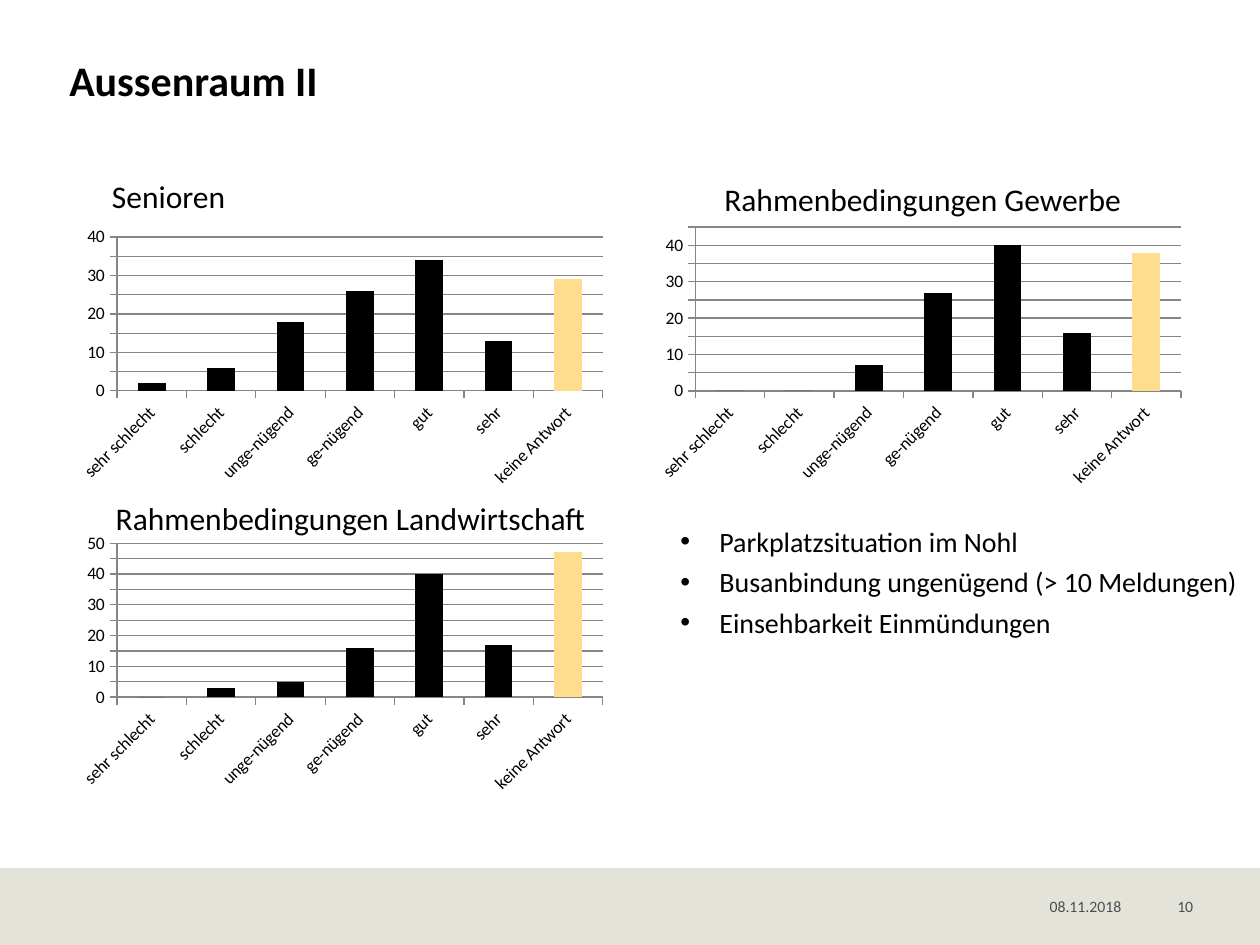
from dataclasses import dataclass

from lxml import etree
from pptx import Presentation
from pptx.chart.data import CategoryChartData
from pptx.dml.color import RGBColor
from pptx.enum import chart as charts, shapes, text
from pptx.oxml.ns import qn
from pptx.util import Pt

PX = 9144
FONT = "Calibri"
BLACK, GREY, SAND, YELLOW, AXIS = "000000", "4C4F52", "E4E3D9", "FFDD8F", "868686"
CATEGORIES = ["sehr schlecht", "schlecht", "unge-nügend", "ge-nügend", "gut", "sehr", "keine Antwort"]
CHART_WIDTH, CHART_HEIGHT = 432, 215


@dataclass
class Box:
    left: int
    top: int
    width: int
    height: int

    def emu(self) -> list[int]:
        return [side * PX for side in (self.left, self.top, self.width, self.height)]


@dataclass
class Survey:
    heading: str
    heading_box: Box
    left: int
    top: int
    values: tuple[int, ...]
    maximum: int


SURVEYS = [
    Survey("Senioren", Box(79, 136, 111, 40), 55, 176, (2, 6, 18, 26, 34, 13, 29), 40),
    Survey("Rahmenbedingungen Gewerbe", Box(565, 138, 339, 40), 514, 176, (0, 0, 7, 27, 40, 16, 38), 45),
    Survey("Rahmenbedingungen Landwirtschaft", Box(82, 391, 398, 40), 55, 419, (0, 3, 5, 16, 40, 17, 47), 50),
]
REMARKS = [
    "Parkplatzsituation im Nohl",
    "Busanbindung ungenügend (> 10 Meldungen)",
    "Einsehbarkeit Einmündungen",
]


def colour(value: str) -> RGBColor:
    return RGBColor.from_string(value)


def style(font, size: int, fill: str, bold: bool = False) -> None:
    font.name, font.size, font.bold = FONT, Pt(size), bold
    font.color.rgb = colour(fill)


def place(shape, box: Box) -> None:
    shape.left, shape.top, shape.width, shape.height = box.emu()


def clear_margins(frame) -> None:
    frame.margin_left = frame.margin_top = frame.margin_right = frame.margin_bottom = 0


def write(para, words: str, size: int, fill: str, bold: bool = False) -> None:
    span = para.add_run()
    span.text = words
    style(span.font, size, fill, bold)


def add_band(page) -> None:
    band = page.shapes.add_shape(shapes.MSO_SHAPE.RECTANGLE, *Box(0, 689, 1000, 61).emu())
    band.shadow.inherit = False
    band.fill.solid()
    band.fill.fore_color.rgb = colour(SAND)
    band.line.fill.background()


def add_footer(page, words: str, box: Box, align) -> None:
    frame = page.shapes.add_textbox(*box.emu()).text_frame
    clear_margins(frame)
    frame.word_wrap = True
    frame.vertical_anchor = text.MSO_ANCHOR.BOTTOM
    frame.paragraphs[0].alignment = align
    write(frame.paragraphs[0], words, 9, GREY)


def fill_title(title, words: str) -> None:
    place(title, Box(55, 43, 891, 40))
    frame = title.text_frame
    clear_margins(frame)
    frame.auto_size = text.MSO_AUTO_SIZE.NONE
    frame.vertical_anchor = text.MSO_ANCHOR.TOP
    frame.paragraphs[0].alignment = text.PP_ALIGN.LEFT
    write(frame.paragraphs[0], words, 24, BLACK, True)


def fill_remarks(body, remarks: list[str]) -> None:
    place(body, Box(530, 411, 891, 491))
    frame = body.text_frame
    frame.auto_size = text.MSO_AUTO_SIZE.NONE
    for index, remark in enumerate(remarks):
        para = frame.add_paragraph() if index else frame.paragraphs[0]
        para.space_before = Pt(4 if index else 0)
        properties = para._p.get_or_add_pPr()
        properties.set("marL", str(31 * PX))
        properties.set("indent", str(-31 * PX))
        etree.SubElement(properties, qn("a:buFont"), typeface="Arial")
        etree.SubElement(properties, qn("a:buChar"), char="•")
        write(para, remark, 16, BLACK)


def draw_line(line) -> None:
    line.color.rgb = colour(AXIS)
    line.width = Pt(0.75)


def add_survey(page, survey: Survey) -> None:
    frame = page.shapes.add_textbox(*survey.heading_box.emu()).text_frame
    frame.word_wrap = False
    frame.auto_size = text.MSO_AUTO_SIZE.SHAPE_TO_FIT_TEXT
    write(frame.paragraphs[0], survey.heading, 18, BLACK)

    data = CategoryChartData()
    data.categories = CATEGORIES
    data.add_series("Series 1", survey.values)
    box = Box(survey.left, survey.top, CHART_WIDTH, CHART_HEIGHT)
    chart = page.shapes.add_chart(charts.XL_CHART_TYPE.COLUMN_CLUSTERED, *box.emu(), data).chart
    chart.has_legend = chart.has_title = False
    style(chart.font, 10, BLACK)

    plot = chart.plots[0]
    plot.gap_width, plot.vary_by_categories = 150, False
    series = plot.series[0]
    for part, fill in ((series, BLACK), (series.points[len(CATEGORIES) - 1], YELLOW)):
        part.format.fill.solid()
        part.format.fill.fore_color.rgb = colour(fill)

    for axis in (chart.category_axis, chart.value_axis):
        axis.major_tick_mark = charts.XL_TICK_MARK.OUTSIDE
        draw_line(axis.format.line)
        style(axis.tick_labels.font, 10, BLACK)
    chart.category_axis._element.find(qn("c:txPr")).find(qn("a:bodyPr")).set("rot", "-2700000")
    values = chart.value_axis
    values.minimum_scale, values.maximum_scale, values.major_unit = 0, survey.maximum, 5
    values.has_major_gridlines = True
    draw_line(values.major_gridlines.format.line)


def main() -> None:
    """Build the survey slide and save it."""
    deck = Presentation()
    deck.slide_width, deck.slide_height = 1000 * PX, 750 * PX
    page = deck.slides.add_slide(deck.slide_layouts[1])
    add_band(page)
    fill_title(page.shapes.title, "Aussenraum II")
    add_footer(page, "08.11.2018", Box(833, 693, 71, 34), text.PP_ALIGN.LEFT)
    add_footer(page, "10", Box(904, 693, 43, 34), text.PP_ALIGN.RIGHT)
    for survey in SURVEYS:
        add_survey(page, survey)
    fill_remarks(page.placeholders[1], REMARKS)
    deck.save("out.pptx")


if __name__ == "__main__":
    main()
